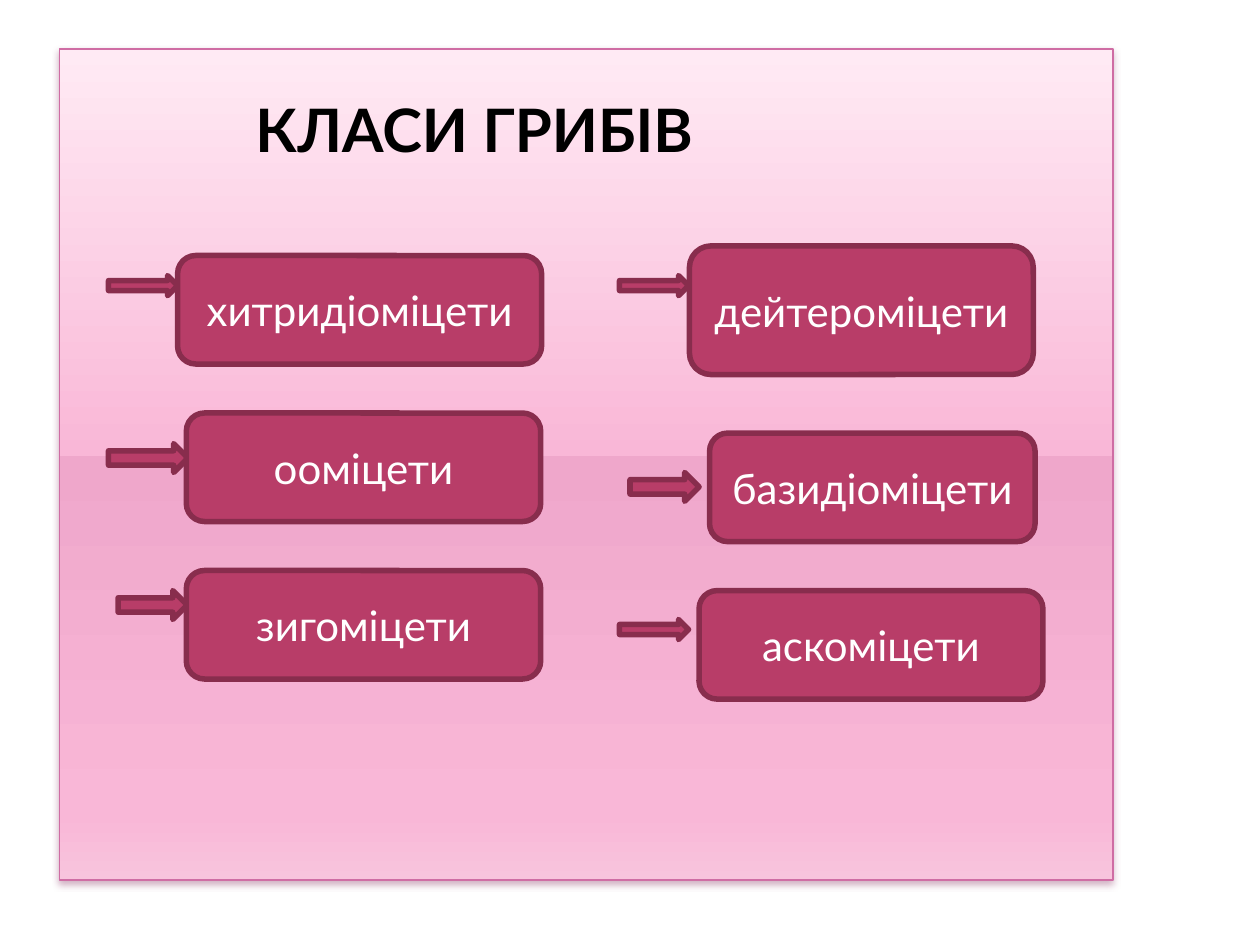
from lxml.etree import SubElement
from pptx import Presentation
from pptx.dml.color import RGBColor
from pptx.enum.shapes import MSO_SHAPE
from pptx.enum.text import MSO_ANCHOR, PP_ALIGN
from pptx.oxml.ns import qn
from pptx.util import Pt

FONT = "Lato"
BERRY, BERRY_EDGE = "B83D68", "882D4D"
PANEL_STOPS = [(0, "FFEAF4"), (49, "F9B7D7"), (49, "EFA7CB"), (92, "F9B7D7"), (100, "F8C4DD")]
TITLE = {"size": Pt(34.2), "name": FONT, "bold": True}
LABEL = {"size": Pt(24), "name": FONT}

COLUMNS = [
    [
        ("хитридіоміцети", (101.5, 146, 208, 62), (62, 157.5, 39.5, 11.5)),
        ("ооміцети", (106.5, 236, 202.5, 62), (62, 253.5, 45.5, 16.5)),
        ("зигоміцети", (106.5, 326, 202.5, 62), (67.5, 337.5, 39.5, 16.5)),
    ],
    [
        ("дейтероміцети", (394, 140.5, 196.5, 73.5), (354, 157.5, 39.5, 11.5)),
        ("базидіоміцети", (405.5, 247.5, 186, 62), (360, 270, 39.5, 16.5)),
        ("аскоміцети", (399.5, 337.5, 196.5, 62), (354, 354, 39.5, 11.5)),
    ],
]


def color(value):
    return RGBColor.from_string(value)


def add_shape(s, kind, box, fill, edge, width):
    sp = s.shapes.add_shape(kind, *map(Pt, box))
    sp.shadow.inherit = False
    sp.fill.solid()
    sp.fill.fore_color.rgb = color(fill)
    sp.line.color.rgb = color(edge)
    sp.line.width = Pt(width)
    return sp


def write(sp, text, font, ink, align, frame):
    tf = sp.text_frame
    for name, value in frame.items():
        setattr(tf, name, value)
    p = tf.paragraphs[0]
    p.alignment = align
    r = p.add_run()
    r.text = text
    for name, value in font.items():
        setattr(r.font, name, value)
    r.font.color.rgb = color(ink)


def set_gradient(sp, stops):
    sp.fill.gradient()
    sp.fill.gradient_angle = 270
    gs_lst = sp.element.spPr.find(qn("a:gradFill")).find(qn("a:gsLst"))
    for gs in list(gs_lst):
        gs_lst.remove(gs)
    for pos, value in stops:
        gs = SubElement(gs_lst, qn("a:gs"), pos=str(pos * 1000))
        SubElement(gs, qn("a:srgbClr"), val=value)


def set_shadow(sp, value, alpha, blur, dist):
    effects = sp.element.spPr.find(qn("a:effectLst"))
    shadow = SubElement(effects, qn("a:outerShdw"), blurRad=str(Pt(blur)),
                        dist=str(Pt(dist)), dir="5400000", rotWithShape="0")
    clr = SubElement(shadow, qn("a:srgbClr"), val=value)
    SubElement(clr, qn("a:alpha"), val=str(alpha * 1000))


def add_title_panel(s, box):
    sp = add_shape(s, MSO_SHAPE.RECTANGLE, box, "F9B7D7", "CF6DA4", 0.9)
    set_gradient(sp, PANEL_STOPS)
    set_shadow(sp, "893263", 38, 4, 2)
    frame = {"word_wrap": True, "vertical_anchor": MSO_ANCHOR.TOP,
             "margin_left": Pt(112), "margin_top": Pt(25)}
    write(sp, "КЛАСИ ГРИБІВ", TITLE, "000000", PP_ALIGN.LEFT, frame)


def add_class(s, name, box, arrow):
    add_shape(s, MSO_SHAPE.RIGHT_ARROW, arrow, BERRY, BERRY_EDGE, 3.15)
    sp = add_shape(s, MSO_SHAPE.ROUNDED_RECTANGLE, box, BERRY, BERRY_EDGE, 3.15)
    frame = {"word_wrap": True, "vertical_anchor": MSO_ANCHOR.MIDDLE}
    write(sp, name, LABEL, "FFFFFF", PP_ALIGN.CENTER, frame)


def main():
    prs = Presentation()
    prs.slide_width, prs.slide_height = Pt(720), Pt(540)
    s = prs.slides.add_slide(prs.slide_layouts[6])
    add_title_panel(s, (34, 28, 602, 475))
    for column in COLUMNS:
        for name, box, arrow in column:
            add_class(s, name, box, arrow)
    prs.save("out.pptx")


if __name__ == "__main__":
    main()
